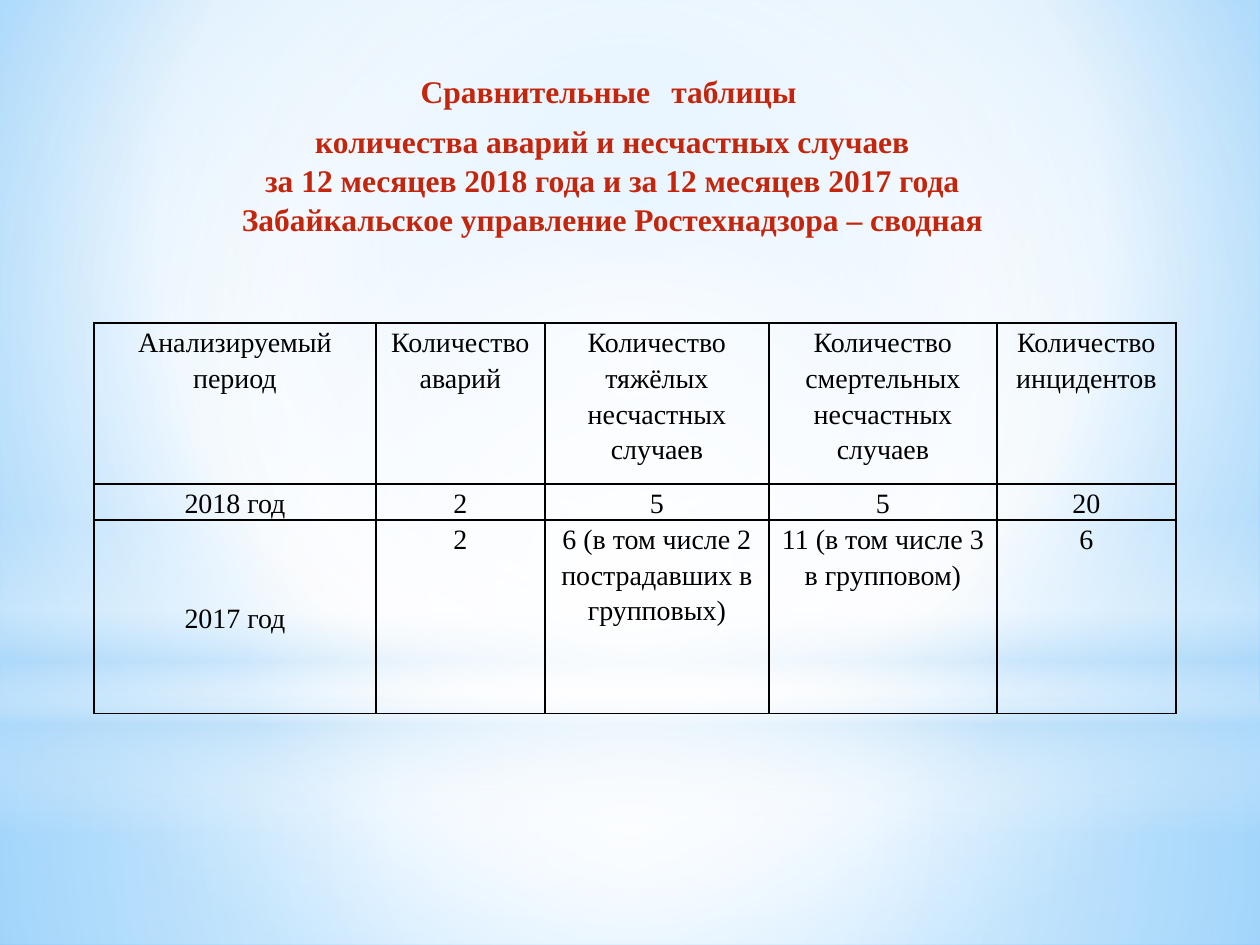
from dataclasses import dataclass
from typing import Optional

from lxml.etree import SubElement
from pptx import Presentation
from pptx.dml.color import RGBColor
from pptx.enum.shapes import MSO_SHAPE as Preset
from pptx.enum.text import MSO_ANCHOR as Anchor, MSO_AUTO_SIZE as AutoSize, PP_ALIGN as Align
from pptx.oxml.ns import qn
from pptx.util import Emu, Pt

FONT = "Times New Roman"
WHITE = RGBColor(0xFF, 0xFF, 0xFF)
BLACK = RGBColor(0x00, 0x00, 0x00)
RED = RGBColor(0xC3, 0x26, 0x0C)
MIST = RGBColor(0xB4, 0xDC, 0xFA)
SKY = RGBColor(0x9E, 0xD5, 0xFF)
AZURE = RGBColor(0x5B, 0xB9, 0xFF)

CENTRE = (50, 50, 50, 50)
COLUMN_WIDTHS = (282, 169, 224, 228, 179)
ROW_HEIGHTS = (161, 33, 194)
TABLE_ROWS = (
    (
        "Анализируемый период",
        "Количество аварий",
        "Количество\nтяжёлых несчастных случаев",
        "Количество смертельных несчастных случаев",
        "Количество инцидентов",
    ),
    ("2018 год", "2", "5", "5", "20"),
    (
        "2017 год",
        "2",
        "6 (в том числе 2 пострадавших в групповых)",
        "11 (в том числе 3 в групповом)",
        "6",
    ),
)
TITLE_LINES = (
    "количества аварий и несчастных случаев",
    "за 12 месяцев 2018 года и за 12 месяцев 2017 года",
    "Забайкальское управление Ростехнадзора – сводная",
)


@dataclass(frozen=True)
class Stop:
    position: int
    color: RGBColor
    alpha: int = 100


@dataclass(frozen=True)
class Gradient:
    stops: tuple[Stop, ...]
    focus: Optional[tuple[int, int, int, int]] = CENTRE


@dataclass(frozen=True)
class Glow:
    preset: Preset
    top: int
    height: int
    gradient: Gradient


BACKDROP = Gradient((Stop(0, SKY), Stop(60, WHITE), Stop(100, AZURE)), (20, 10, 20, 60))
GLOWS = (
    Glow(Preset.RECTANGLE, 703, 242,
         Gradient((Stop(0, WHITE, 91), Stop(37, WHITE, 76), Stop(100, MIST, 79)))),
    Glow(Preset.RECTANGLE, 0, 703,
         Gradient((Stop(0, WHITE, 89), Stop(48, WHITE, 62), Stop(100, MIST, 79)))),
    Glow(Preset.RECTANGLE, 519, 315,
         Gradient((Stop(0, WHITE, 0), Stop(29, WHITE, 30), Stop(45, MIST, 40),
                   Stop(55, WHITE, 26), Stop(65, MIST, 60), Stop(100, WHITE, 0)), None)),
    Glow(Preset.OVAL, 220, 703, Gradient((Stop(0, WHITE), Stop(56, WHITE, 0)))),
)


def px(length: int) -> Emu:
    return Emu(round(length * 914400 / 126))


def apply_gradient(fill, owner, gradient: Gradient) -> None:
    fill.solid()
    solid = next(owner.iter(qn("a:solidFill")))
    element = solid.makeelement(qn("a:gradFill"), {"rotWithShape": "1"})
    stop_list = SubElement(element, qn("a:gsLst"))
    for stop in gradient.stops:
        entry = SubElement(stop_list, qn("a:gs"), pos=str(stop.position * 1000))
        color = SubElement(entry, qn("a:srgbClr"), val=str(stop.color))
        if stop.alpha < 100:
            SubElement(color, qn("a:alpha"), val=str(stop.alpha * 1000))
    if gradient.focus:
        shade = SubElement(element, qn("a:path"), {"path": "circle"})
        sides = zip("ltrb", gradient.focus)
        SubElement(shade, qn("a:fillToRect"), {side: str(part * 1000) for side, part in sides})
    else:
        SubElement(element, qn("a:lin"), ang="5400000", scaled="0")
    solid.getparent().replace(solid, element)


def add_glow(slide, glow: Glow) -> None:
    shape = slide.shapes.add_shape(glow.preset, 0, px(glow.top), px(1260), px(glow.height))
    shape.shadow.inherit = False
    shape.line.fill.background()
    apply_gradient(shape.fill, shape._element.spPr, glow.gradient)


def add_run(paragraph, text: str, size: int, color: RGBColor, bold: bool = False) -> None:
    run = paragraph.add_run()
    run.text = text
    run.font.name = FONT
    run.font.size = Pt(size)
    run.font.bold = bold
    run.font.color.rgb = color


def format_title(slide) -> None:
    title = slide.shapes.title
    slide.shapes._spTree.append(title._element)
    title.left, title.top, title.width, title.height = px(164), px(5), px(897), px(198)
    frame = title.text_frame
    frame.word_wrap = True
    frame.auto_size = AutoSize.NONE
    frame.vertical_anchor = Anchor.TOP
    frame.margin_top = px(12)
    paragraph = frame.paragraphs[0]
    paragraph.alignment = Align.CENTER
    paragraph.line_spacing = 1.03
    paragraph.font.size = Pt(18)
    add_run(paragraph, "Сравнительные", 18, RED, True)
    add_run(paragraph, " ", 48, RED, True)
    add_run(paragraph, "таблицы ", 18, RED, True)
    for line in TITLE_LINES:
        paragraph.add_line_break()
        add_run(paragraph, line, 18, RED, True)


def add_borders(cell) -> None:
    properties = cell._tc.get_or_add_tcPr()
    for side in ("a:lnL", "a:lnR", "a:lnT", "a:lnB"):
        line = SubElement(properties, qn(side), w=str(Pt(1)))
        SubElement(SubElement(line, qn("a:solidFill")), qn("a:srgbClr"), val=str(BLACK))


def fill_cell(cell, text: str, anchor: Anchor) -> None:
    add_borders(cell)
    cell.fill.background()
    cell.margin_left = cell.margin_right = px(9)
    cell.margin_top = cell.margin_bottom = 0
    cell.vertical_anchor = anchor
    frame = cell.text_frame
    for index, line in enumerate(text.split("\n")):
        paragraph = frame.add_paragraph() if index else frame.paragraphs[0]
        paragraph.alignment = Align.CENTER
        paragraph.line_spacing = 1.15
        add_run(paragraph, line, 16, BLACK)


def add_comparison_table(slide) -> None:
    table = slide.shapes.add_table(
        len(ROW_HEIGHTS), len(COLUMN_WIDTHS), px(94), px(323),
        px(sum(COLUMN_WIDTHS)), px(sum(ROW_HEIGHTS)),
    ).table
    table.first_row = False
    table.horz_banding = False
    for column, width in zip(table.columns, COLUMN_WIDTHS):
        column.width = px(width)
    for row_index, (row, height) in enumerate(zip(table.rows, ROW_HEIGHTS)):
        row.height = px(height)
        for column_index, text in enumerate(TABLE_ROWS[row_index]):
            is_period = row_index > 0 and column_index == 0
            fill_cell(row.cells[column_index], text, Anchor.MIDDLE if is_period else Anchor.TOP)


def main() -> None:
    presentation = Presentation()
    presentation.slide_width, presentation.slide_height = px(1260), px(945)
    slide = presentation.slides.add_slide(presentation.slide_layouts[5])
    apply_gradient(slide.background.fill, slide._element, BACKDROP)
    for glow in GLOWS:
        add_glow(slide, glow)
    format_title(slide)
    add_comparison_table(slide)
    presentation.save("out.pptx")


if __name__ == "__main__":
    main()
